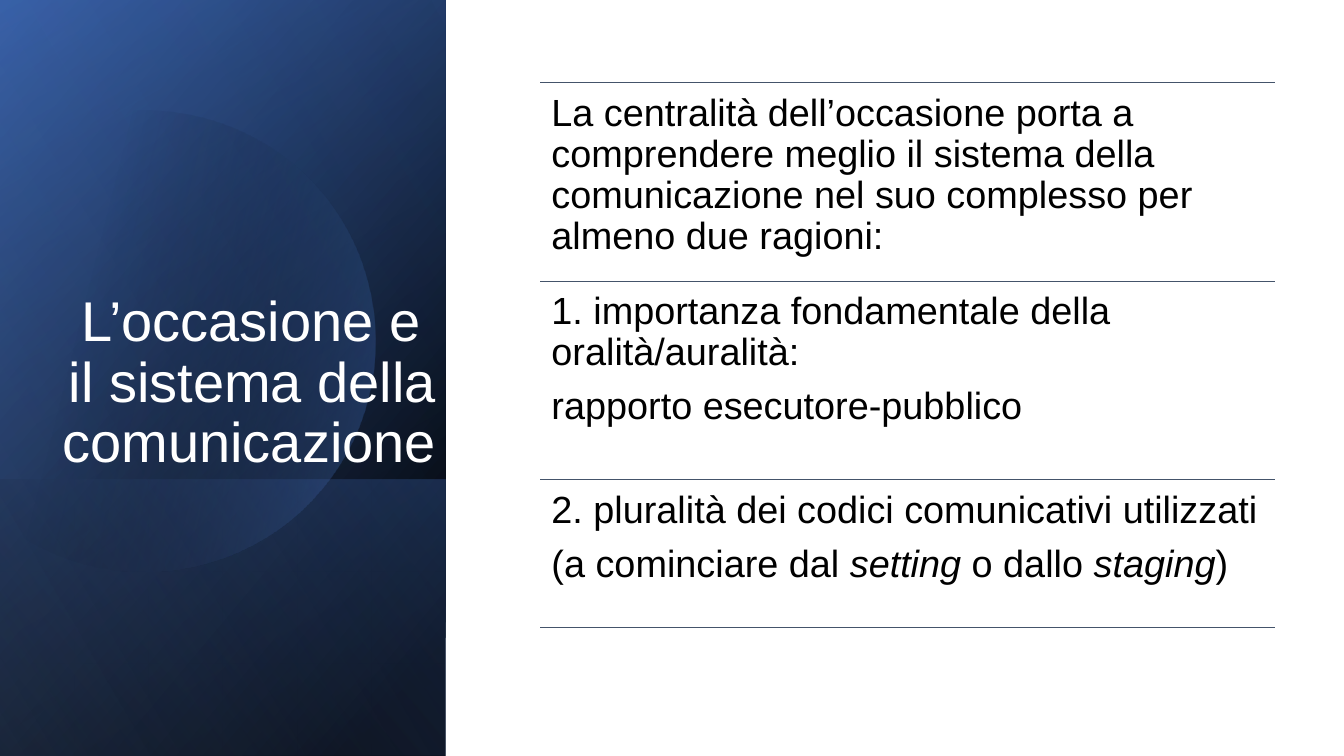
from dataclasses import dataclass

from lxml import etree
from pptx import Presentation
from pptx.dml.color import RGBColor
from pptx.enum.shapes import MSO_CONNECTOR as CONN, MSO_SHAPE as SHAPE
from pptx.enum.text import MSO_ANCHOR as ANCHOR, PP_ALIGN as ALIGN
from pptx.oxml import parse_xml
from pptx.oxml.ns import nsdecls, qn
from pptx.util import Inches, Pt

FONT = "Arial"
PANEL_W, SLIDE_H = 4.42, 7.5
LIST_X, LIST_W = 5.36, 7.29
BODY_SIZE = 27


@dataclass
class Stop:
    pos: int
    color: str
    alpha: int = 100


@dataclass
class Layer:
    top: float
    angle: int
    stops: list[Stop]


@dataclass
class Run:
    text: str
    italic: bool = False


@dataclass
class Section:
    top: float
    height: float
    paragraphs: list[list[Run]]


BASE = [
    Layer(0, 50, [Stop(8, "000000"), Stop(100, "2F5597")]),
    Layer(0, 30, [Stop(0, "000000", 0), Stop(99, "4472C4", 46)]),
    Layer(4.76, 130, [Stop(2, "4472C4", 29), Stop(100, "000000", 30)]),
]
GLOW = [Stop(29, "000000", 0), Stop(100, "4472C4", 43)]
SHEEN = Layer(0, 120, [Stop(0, "000000", 0), Stop(99, "8FAADC", 11)])

CIRCLE_START = (1.49, 1.1)
CIRCLE = [
    [(2.46, 1.12), (3.35, 1.77), (3.63, 2.75)],
    [(3.98, 3.97), (3.28, 5.23), (2.07, 5.58)],
    [(1.31, 5.8), (0.53, 5.61), (-0.03, 5.14)],
    [(-0.15, 5.03)],
    [(-0.15, 1.75)],
    [(0, 1.61)],
    [(0.23, 1.42), (0.5, 1.28), (0.8, 1.19)],
    [(1.03, 1.13), (1.26, 1.1), (1.49, 1.1)],
]

SECTIONS = [
    Section(0.82, 1.97, [[Run(
        "La centralità dell’occasione porta a comprendere meglio il sistema "
        "della comunicazione nel suo complesso per almeno due ragioni:")]]),
    Section(2.79, 1.97, [
        [Run("1. importanza fondamentale della oralità/auralità:")],
        [Run("rapporto esecutore-pubblico")]]),
    Section(4.76, 1.46, [
        [Run("2. pluralità dei codici comunicativi utilizzati")],
        [Run("(a cominciare dal "), Run("setting", True), Run(" o dallo "),
         Run("staging", True), Run(")")]]),
]


def rgb(color: str) -> RGBColor:
    return RGBColor.from_string(color)


def fill_gradient(sp, stops: list[Stop], angle: int) -> None:
    sp.shadow.inherit = False
    sp.line.fill.background()
    sp.fill.background()
    marks = "".join(
        f'<a:gs pos="{st.pos * 1000}"><a:srgbClr val="{st.color}">'
        f'<a:alpha val="{st.alpha * 1000}"/></a:srgbClr></a:gs>' for st in stops)
    grad = parse_xml(
        f'<a:gradFill {nsdecls("a")} rotWithShape="1"><a:gsLst>{marks}</a:gsLst>'
        f'<a:lin ang="{angle * 60000}" scaled="0"/></a:gradFill>')
    pr = sp._element.spPr
    pr.replace(pr.find(qn("a:noFill")), grad)


def add_layer(s, layer: Layer) -> None:
    w = SLIDE_H - layer.top
    x, y = (PANEL_W - w) / 2, layer.top + (w - PANEL_W) / 2
    sp = s.shapes.add_shape(SHAPE.RECTANGLE, Inches(x), Inches(y),
                            Inches(w), Inches(PANEL_W))
    sp.rotation = 90
    sp._element.spPr.find(qn("a:xfrm")).set("flipH", "1")
    fill_gradient(sp, layer.stops, layer.angle)


def bezier(a, b, c, d, steps: int = 24) -> list[tuple[float, float]]:
    return [tuple((1 - t) ** 3 * i + 3 * (1 - t) ** 2 * t * j
                  + 3 * (1 - t) * t ** 2 * k + t ** 3 * m
                  for i, j, k, m in zip(a, b, c, d))
            for t in (n / steps for n in range(1, steps + 1))]


def add_circle(s) -> None:
    points = [CIRCLE_START]
    for seg in CIRCLE:
        points += bezier(points[-1], *seg) if len(seg) == 3 else seg
    start, *rest = [(Inches(x), Inches(y)) for x, y in points]
    builder = s.shapes.build_freeform(*start)
    builder.add_line_segments(rest, close=True)
    fill_gradient(builder.convert_to_shape(), GLOW, 14)


def add_rule(s, y: float) -> None:
    ln = s.shapes.add_connector(CONN.STRAIGHT, Inches(LIST_X), Inches(y),
                                Inches(LIST_X + LIST_W), Inches(y))
    ln.line.color.rgb = rgb("44546A")
    ln.line.width = Pt(0.5)
    etree.SubElement(ln._element.spPr, qn("a:effectLst"))


def add_text_frame(s, x: float, y: float, w: float, h: float,
                   inset_y: float, anchor=ANCHOR.TOP, inset_x: float = 0.11):
    tf = s.shapes.add_textbox(Inches(x), Inches(y), Inches(w), Inches(h)).text_frame
    tf.word_wrap = True
    tf.vertical_anchor = anchor
    tf.margin_left = tf.margin_right = Inches(inset_x)
    tf.margin_top = tf.margin_bottom = Inches(inset_y)
    return tf


def add_run(p, text: str, size: float, color: str, italic: bool = False) -> None:
    r = p.add_run()
    r.text = text
    r.font.name = FONT
    r.font.size = Pt(size)
    r.font.italic = italic
    r.font.color.rgb = rgb(color)


def add_title(s) -> None:
    tf = add_text_frame(s, 0, 2.34, PANEL_W, 2.42, 0.05, ANCHOR.BOTTOM, 0.1)
    p = tf.paragraphs[0]
    p.alignment = ALIGN.RIGHT
    p.line_spacing = 0.9
    add_run(p, "L’occasione e ", 40, "FFFFFF")
    p.add_line_break()
    add_run(p, "il sistema della comunicazione", 40, "FFFFFF")


def add_section(s, section: Section) -> None:
    add_rule(s, section.top)
    tf = add_text_frame(s, LIST_X, section.top, LIST_W, section.height, 0.11)
    for i, runs in enumerate(section.paragraphs):
        p = tf.add_paragraph() if i else tf.paragraphs[0]
        p.line_spacing = 0.9
        p.space_after = Pt(BODY_SIZE * 0.35)
        for run in runs:
            add_run(p, run.text, BODY_SIZE, "000000", run.italic)


def main() -> None:
    prs = Presentation()
    prs.slide_width, prs.slide_height = Inches(13.33), Inches(SLIDE_H)
    s = prs.slides.add_slide(prs.slide_layouts[6])
    for layer in BASE:
        add_layer(s, layer)
    add_circle(s)
    add_layer(s, SHEEN)
    add_title(s)
    for section in SECTIONS:
        add_section(s, section)
    add_rule(s, SECTIONS[-1].top + SECTIONS[-1].height)
    prs.save("out.pptx")


if __name__ == "__main__":
    main()
